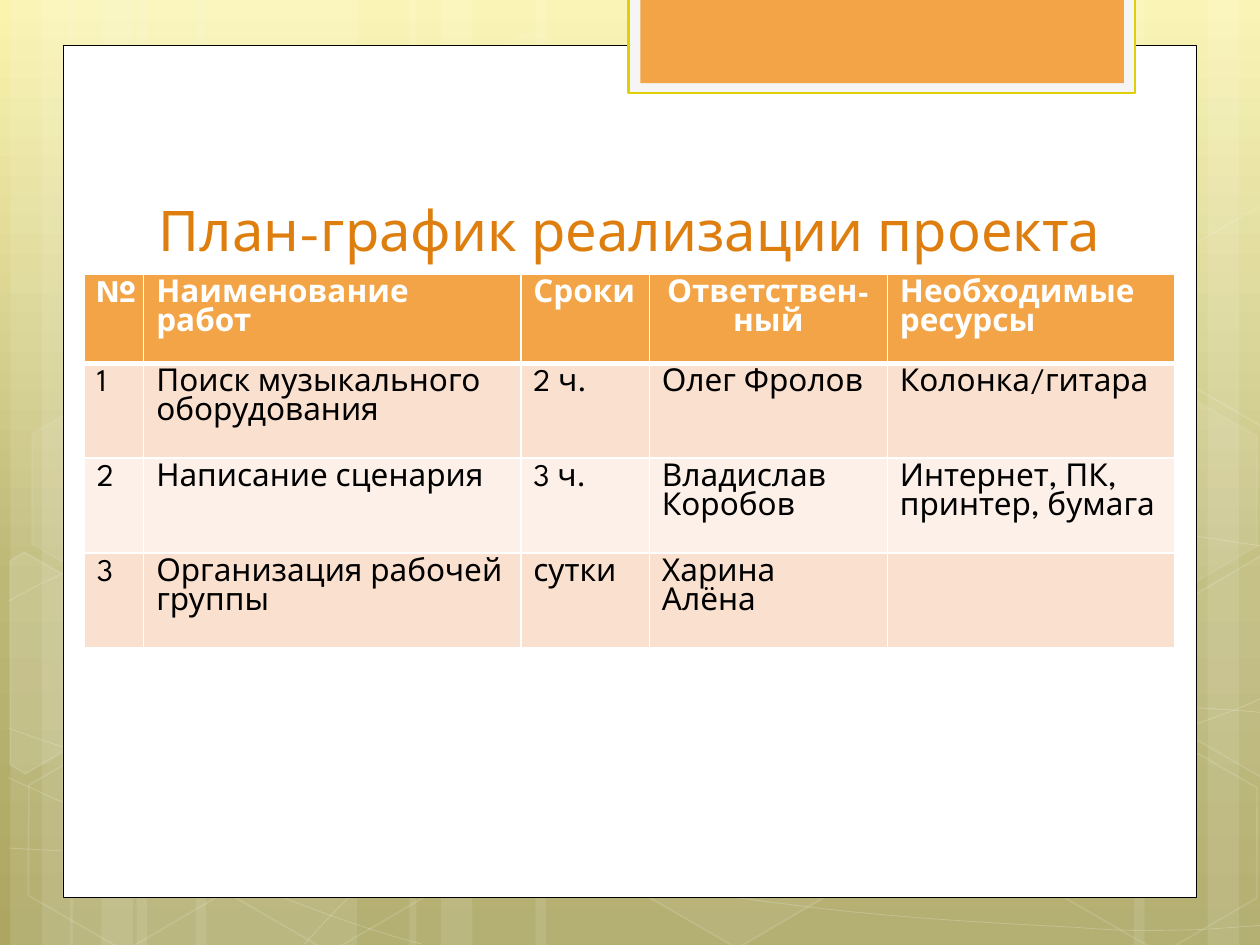
from copy import deepcopy
from math import cos, radians, sin

from lxml import etree
from pptx import Presentation
from pptx.dml.color import RGBColor
from pptx.enum.shapes import MSO_SHAPE
from pptx.enum.text import MSO_ANCHOR, PP_ALIGN
from pptx.oxml.ns import qn
from pptx.util import Pt

RECTANGLE, HEXAGON = MSO_SHAPE.RECTANGLE, MSO_SHAPE.HEXAGON
BOTTOM, CENTER, LEFT = MSO_ANCHOR.BOTTOM, PP_ALIGN.CENTER, PP_ALIGN.LEFT
FONT = "League Spartan"
WHITE = RGBColor(0xFF, 0xFF, 0xFF)
BLACK = RGBColor(0x00, 0x00, 0x00)
PALE_GREY = RGBColor(0xF5, 0xF5, 0xF5)
YELLOW = RGBColor(0xDF, 0xCF, 0x04)
ORANGE = RGBColor(0xF3, 0xA4, 0x47)
DARK_ORANGE = RGBColor(0xDD, 0x7E, 0x0E)
PEACH = RGBColor(0xFA, 0xE0, 0xCF)
LIGHT_PEACH = RGBColor(0xFD, 0xF0, 0xE9)
BACKDROP = [(0, RGBColor(0xFA, 0xF4, 0xAF)), (0.62, RGBColor(0xBD, 0xB8, 0x76)),
            (1, RGBColor(0xAC, 0xA6, 0x62))]


def paint(fill, color, opacity=100):
    """Solid fill with opacity in percent; no fill at zero."""
    if not opacity:
        fill.background()
        return
    fill.solid()
    fill.fore_color.rgb = color
    if opacity < 100:
        rgb = fill._xPr.find(qn("a:solidFill"))[0]
        etree.SubElement(rgb, qn("a:alpha"), val=str(opacity * 1000))


def style(shape, fill, opacity=100, line=None, width=0, line_opacity=100):
    shape.shadow.inherit = False
    paint(shape.fill, fill, opacity)
    paint(shape.line.fill, line, line_opacity if line is not None else 0)
    if line is not None:
        shape.line.width = Pt(width)


prs = Presentation()
prs.slide_width, prs.slide_height = Pt(720), Pt(540)
slide = prs.slides.add_slide(prs.slide_layouts[5])
shapes = slide.shapes

# Background gradient, top to bottom
backdrop = slide.background.fill
backdrop.gradient()
backdrop.gradient_angle = 270
stop_list = slide.element.find(".//" + qn("a:gsLst"))
stop_list.append(deepcopy(stop_list[0]))
for stop, (position, color) in zip(backdrop.gradient_stops, BACKDROP):
    stop.position = position
    stop.color.rgb = color

# Translucent vertical stripes: left, width, rotation
STRIPES = [(78, 126, 0), (6, 36, 0), (24, 60, 0), (112, 126, 0), (40, 36, 0),
           (58, 60, 0), (528, 126, 180), (690, 36, 180), (648, 60, 180),
           (306, 222, 0), (234, 36, 0), (252, 60, 0)]
for left, width, rotation in STRIPES:
    stripe = shapes.add_shape(RECTANGLE, Pt(left), 0, Pt(width), Pt(540))
    stripe.rotation = rotation
    style(stripe, WHITE, 10)

# Flowing thin lines: start point, then Bezier segments of three points
WAVES = [
    [(5, 484.6), (43.9, 486.7), (82.8, 488.9), (136.8, 488.2),
     (190.8, 487.4), (257.8, 486), (329.8, 478.8),
     (401.8, 471.6), (504, 457.9), (570.2, 444.2),
     (635.8, 430.6), (703.4, 409), (725, 396.7)],
    [(5, 343.4), (25.9, 331.9), (46.8, 321.1), (87.1, 310.3),
     (128.2, 299.5), (186.5, 283.7), (249.8, 278.6),
     (313.9, 273.6), (391.7, 272.9), (470.9, 278.6),
     (550.1, 284.4), (681.8, 306.7), (725, 312.5)],
    [(4.3, 444.2), (91.4, 483.8), (177.8, 523.4), (240.5, 539.3)],
    [(5, 416.2), (27.4, 424.1), (50.4, 432), (92.2, 443.5),
     (133.9, 454.3), (196.6, 472.3), (257, 484.6),
     (316.8, 496.8), (392.4, 509.8), (452.2, 517),
     (511.9, 524.9), (576, 527.8), (614.2, 529.9),
     (651.6, 532.8), (661.7, 531.4), (680.4, 531.4),
     (699.1, 530.6), (712.1, 529.2), (725, 528.5)],
    [(174.2, 539.3), (187.2, 524.9), (200.2, 510.5), (217.4, 497.5),
     (234.7, 484.6), (259.2, 470.2), (279.4, 460.1),
     (299.5, 450), (311.8, 445.7), (338.4, 438.5),
     (364.3, 431.3), (412.6, 421.2), (437.8, 416.2),
     (463.7, 411.1), (467.3, 411.1), (489.6, 409.7),
     (511.9, 407.5), (547.2, 405.4), (571.7, 404.6),
     (596.9, 403.9), (637.9, 404.6), (637.9, 404.6),
     (654, 404.6), (670, 404.6), (686.2, 404.6),
     (699.1, 405.4), (711.4, 406.1), (724.3, 407.5)],
]
for wave in WAVES:
    start, *rest = [(Pt(x), Pt(y)) for x, y in wave]
    builder = shapes.build_freeform(*start)
    builder.add_line_segments(rest, close=False)
    curve = builder.convert_to_shape()
    # Each three straight segments become one cubic segment
    segments = curve.element.findall(".//" + qn("a:lnTo"))
    for i in range(0, len(segments), 3):
        segments[i].tag = qn("a:cubicBezTo")
        for control in segments[i + 1:i + 3]:
            segments[i].append(control[0])
            control.getparent().remove(control)
    style(curve, WHITE, 0, WHITE, 0.5, 20)

# Hexagons: left, top, fill opacity, line opacity
TILT = 30
HEXAGONS = [(240.5, 26, 4, 8), (358, 424, 6, 12), (8, 425.5, 0, 12),
            (10, 224.6, 7, 8), (125.3, 426.2, 0, 12), (542.2, 326.2, 10, 12),
            (600.5, 427, 0, 12), (600.5, 226, 7, 8)]
for left, top, opacity, line_opacity in HEXAGONS:
    hexagon = shapes.add_shape(HEXAGON, Pt(left), Pt(top), Pt(126), Pt(109.4))
    hexagon.rotation = TILT
    hexagon.adjustments[0] = 0.285
    style(hexagon, WHITE, opacity, WHITE, 1, line_opacity)

# Tilted hexagons cut off by the slide edges: fill opacity, centre, outline as seen
RIGHT_CUT = [(666.7, 349.2), (720.7, 317.5), (726.5, 321.1),
             (726.5, 441.4), (721.4, 444.2), (666.7, 412.6)]
CUT_HEXAGONS = [
    (10, (25.9, 385.2), [(5.8, 320.4), (13.7, 315.4), (69.1, 347),
                         (68.4, 410.4), (14.4, 442.1), (5.8, 437)]),
    (4, (709.2, 374.4), RIGHT_CUT),
    (0, (709.2, 173.5), [(x, y - 200.5) for x, y in RIGHT_CUT]),
]
cos_tilt, sin_tilt = cos(radians(TILT)), sin(radians(TILT))
for opacity, (cx, cy), outline in CUT_HEXAGONS:
    start, *rest = [(Pt(cx + (x - cx) * cos_tilt + (y - cy) * sin_tilt),
                     Pt(cy - (x - cx) * sin_tilt + (y - cy) * cos_tilt))
                    for x, y in outline]
    builder = shapes.build_freeform(*start)
    builder.add_line_segments(rest, close=True)
    cut_hexagon = builder.convert_to_shape()
    cut_hexagon.rotation = TILT
    style(cut_hexagon, WHITE, opacity, WHITE, 1, 12)

# White page and the orange tab hanging from the top
PANELS = [(36, 25.9, 648, 487.2, WHITE, BLACK, 0.5),
          (359.2, -1.5, 289.6, 54.7, PALE_GREY, YELLOW, 1.25),
          (366, -1.5, 276.2, 49, ORANGE, None, 0)]
for left, top, width, height, fill, line, line_width in PANELS:
    panel = shapes.add_shape(RECTANGLE, Pt(left), Pt(top), Pt(width), Pt(height))
    style(panel, fill, 100, line, line_width)

# Title, brought in front of the decoration
title = shapes.title
shapes.element.append(title.element)
title.left, title.top, title.width, title.height = Pt(48.5), Pt(106), Pt(623), Pt(48)
title.text_frame.text = "План-график реализации проекта"
title.text_frame.vertical_anchor = BOTTOM
heading = title.text_frame.paragraphs[0]
heading.alignment = CENTER
heading.runs[0].font.name = FONT
heading.runs[0].font.size = Pt(32)
heading.runs[0].font.color.rgb = DARK_ORANGE

# Schedule table
SCHEDULE = [
    ["№", "Наименование работ", "Сроки", "Ответствен-ный", "Необходимые ресурсы"],
    ["1", "Поиск музыкального оборудования", "2 ч.", "Олег Фролов", "Колонка/гитара"],
    ["2", "Написание сценария", "3 ч.", "Владислав Коробов",
     "Интернет, ПК, принтер, бумага"],
    ["3", "Организация рабочей группы", "сутки", "Харина Алёна", ""],
]
COLUMN_WIDTHS = [34, 215.5, 73.5, 136, 164.4]
ROW_HEIGHTS = [51, 54.25, 54.25, 54.25]
schedule = shapes.add_table(4, 5, Pt(48.1), Pt(156.6), Pt(sum(COLUMN_WIDTHS)),
                            Pt(sum(ROW_HEIGHTS))).table
for column, width in zip(schedule.columns, COLUMN_WIDTHS):
    column.width = Pt(width)
for r, entries in enumerate(SCHEDULE):
    schedule.rows[r].height = Pt(ROW_HEIGHTS[r])
    for c, entry in enumerate(entries):
        cell = schedule.cell(r, c)
        borders = {"L": 1, "R": 1, "T": 3 if r == 1 else 1, "B": 3 if r == 0 else 1}
        for side, width in borders.items():
            border = etree.SubElement(cell._tc.get_or_add_tcPr(), qn("a:ln" + side),
                                      w=str(Pt(width)))
            paint_element = etree.SubElement(border, qn("a:solidFill"))
            etree.SubElement(paint_element, qn("a:srgbClr"), val=str(WHITE))
        cell.fill.solid()
        cell.fill.fore_color.rgb = ORANGE if r == 0 else PEACH if r % 2 else LIGHT_PEACH
        cell.text_frame.text = entry
        paragraph = cell.text_frame.paragraphs[0]
        paragraph.alignment = CENTER if (r, c) == (0, 3) else LEFT
        for run in paragraph.runs:
            run.font.name, run.font.size = FONT, Pt(18)
            run.font.bold = r == 0
            run.font.color.rgb = WHITE if r == 0 else BLACK

prs.save("out.pptx")
